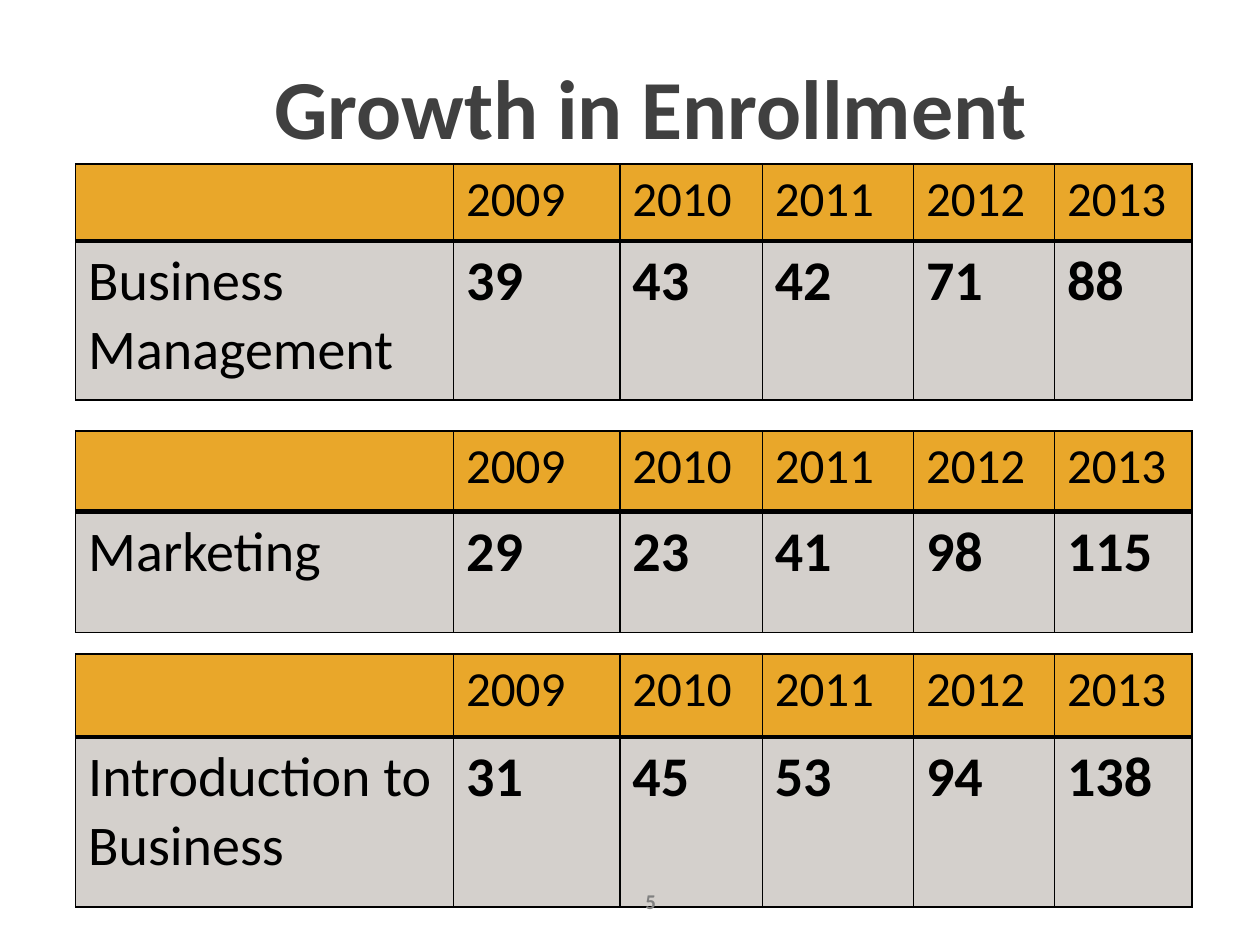
import pptx
import pptx.util
import pptx.dml.color
import pptx.enum.text
import pptx.oxml
import pptx.oxml.ns

Pt = pptx.util.Pt
FONT = "Calibri"
YEARS = ["2009", "2010", "2011", "2012", "2013"]
TABLE_LEFT = 43.2
COLUMN_WIDTHS = [216, 95, 81.4, 86.4, 80.6, 78.5]
HEADER_FILL, BODY_FILL = "E9A72A", "D4D0CC"

# course, enrollment by year, top, header height, body height
COURSES = [
    ("Marketing", [29, 23, 41, 98, 115], 246.2, 46.2, 69),
    ("Introduction to Business", [31, 45, 53, 94, 138], 373.7, 47.5, 97.2),
    ("Business Management", [39, 43, 42, 71, 88], 93.6, 44.2, 90.8),
]


def rgb(value):
    return pptx.dml.color.RGBColor.from_string(value)


def write(para, text, size, color="000000", bold=False):
    span = para.add_run()
    span.text = text
    span.font.color.rgb = rgb(color)
    for name, value in {"name": FONT, "size": Pt(size), "bold": bold}.items():
        setattr(span.font, name, value)


def set_borders(cell, widths):
    """Draw black cell edges; widths maps L, R, T, B to points."""
    properties = cell._tc.get_or_add_tcPr()
    for position, (side, width) in enumerate(widths.items()):
        line = pptx.oxml.parse_xml(
            f'<a:ln{side} {pptx.oxml.ns.nsdecls("a")} w="{Pt(width)}">'
            '<a:solidFill><a:srgbClr val="000000"/></a:solidFill>'
            f'</a:ln{side}>')
        properties.insert(position, line)


def fill_cell(cell, text, size, bold, fill, top, bottom):
    cell.fill.solid()
    cell.fill.fore_color.rgb = rgb(fill)
    set_borders(cell, {"L": 1, "R": 1, "T": top, "B": bottom})
    if text:
        write(cell.text_frame.paragraphs[0], text, size, bold=bold)


def add_course_table(page, course, counts, top, header_height, body_height):
    frame = page.shapes.add_table(
        2, len(COLUMN_WIDTHS), Pt(TABLE_LEFT), Pt(top),
        Pt(sum(COLUMN_WIDTHS)), Pt(header_height + body_height))
    table = frame.table
    for column, width in zip(table.columns, COLUMN_WIDTHS):
        column.width = Pt(width)
    for row, height in zip(table.rows, (header_height, body_height)):
        row.height = Pt(height)
    for index, text in enumerate([""] + YEARS):
        fill_cell(table.cell(0, index), text, 28, False, HEADER_FILL, 1, 3)
    for index, value in enumerate([course] + counts):
        fill_cell(table.cell(1, index), str(value), 32, index > 0, BODY_FILL, 3, 1)


def add_centered_text(page, text, bounds, size, color, line_spacing=None):
    box = page.shapes.add_textbox(*map(Pt, bounds))
    frame = box.text_frame
    frame.word_wrap = True
    frame.vertical_anchor = pptx.enum.text.MSO_ANCHOR.MIDDLE
    para = frame.paragraphs[0]
    para.alignment = pptx.enum.text.PP_ALIGN.CENTER
    if line_spacing:
        para.line_spacing = Pt(line_spacing)
    write(para, text, size, color, bold=True)


def main():
    deck = pptx.Presentation()
    deck.slide_width, deck.slide_height = Pt(720), Pt(540)
    page = deck.slides.add_slide(deck.slide_layouts[6])
    for course in COURSES:
        add_course_table(page, *course)
    add_centered_text(page, "Growth in Enrollment", (85.7, 21.6, 572.4, 83.5),
                      48, "404040", line_spacing=52)
    add_centered_text(page, "5", (347.8, 500.4, 48.2, 28.8), 12, "808080")
    deck.save("out.pptx")


if __name__ == "__main__":
    main()
